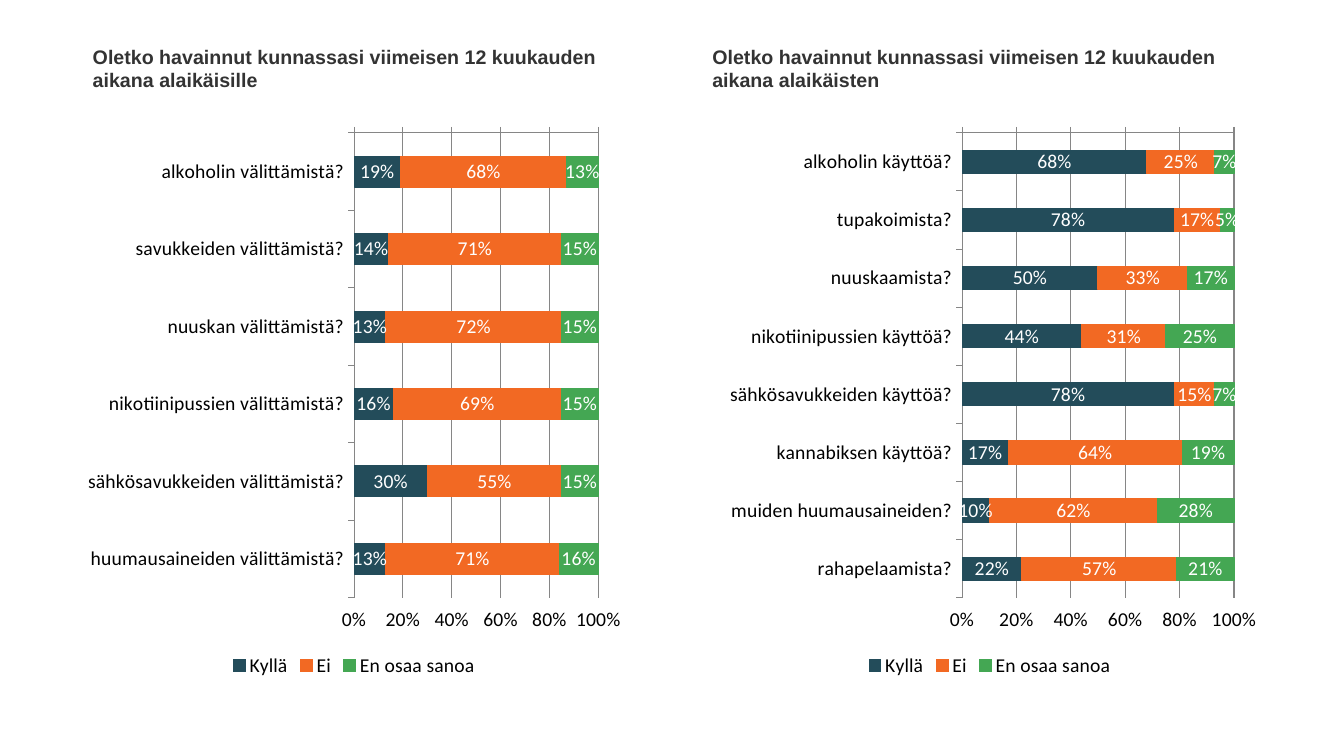
from dataclasses import dataclass

from pptx import Presentation
from pptx import util as u
from pptx.chart.data import CategoryChartData
from pptx.dml.color import RGBColor
from pptx.enum import chart as ch, text
from pptx.oxml import parse_xml
from pptx.oxml.ns import nsdecls


@dataclass(frozen=True)
class Theme:
    """Colours, fonts and type size of the slide."""
    heading: str = "333333"
    label: str = "000000"
    value: str = "FFFFFF"
    grid: str = "868686"
    answers: tuple = ("234C5A", "F26923", "44A753")
    heading_font: str = "Arial"
    chart_font: str = "Calibri"
    size: int = 14


class SurveySlide:
    """Places headings and answer charts in percentages of the slide."""

    def __init__(self, deck, theme):
        """Add a comparison slide and keep its two heading placeholders."""
        self.deck, self.theme = deck, theme
        self.page = deck.slides.add_slide(deck.slide_layouts[4])
        self.headings = [self.page.placeholders[1], self.page.placeholders[3]]
        for box in list(self.page.placeholders):
            if box.placeholder_format.idx not in (1, 3):
                box.element.getparent().remove(box.element)

    def frame(self, left, top, width, height):
        """Turn percentages of the slide into lengths."""
        across, down = self.deck.slide_width / 100, self.deck.slide_height / 100
        return [u.Emu(round(n)) for n in (left * across, top * down, width * across, height * down)]

    def style(self, font, name, color):
        """Apply the common type size with a typeface and colour."""
        font.name, font.size = name, u.Pt(self.theme.size)
        font.color.rgb = RGBColor.from_string(color)

    def heading(self, wording, place):
        """Fill the next heading placeholder."""
        box = self.headings.pop(0)
        box.left, box.top, box.width, box.height = self.frame(*place)
        words = box.text_frame
        words.margin_left = words.margin_right = words.margin_top = words.margin_bottom = 0
        words.vertical_anchor = text.MSO_ANCHOR.TOP
        words.auto_size = text.MSO_AUTO_SIZE.NONE
        words.word_wrap = True
        words.text = wording
        para = words.paragraphs[0]
        para.space_before = u.Pt(0)
        para.alignment = text.PP_ALIGN.LEFT
        para.font.bold = True
        self.style(para.font, self.theme.heading_font, self.theme.heading)

    def chart(self, rows, place, plot_area):
        """Add a stacked bar chart of answers in percent."""
        data = CategoryChartData(number_format="0%")
        data.categories = list(rows)
        for name, values in zip(("Kyllä", "Ei", "En osaa sanoa"), zip(*rows.values())):
            data.add_series(name, [value / 100 for value in values])
        chart = self.page.shapes.add_chart(
            ch.XL_CHART_TYPE.BAR_STACKED, *self.frame(*place), data).chart
        chart.has_title = False
        self.style(chart.font, self.theme.chart_font, self.theme.label)
        chart.has_legend = True
        chart.legend.position = ch.XL_LEGEND_POSITION.BOTTOM
        chart.legend.include_in_layout = False
        self.bars(chart.plots[0])
        self.axes(chart)
        self.plot_area(chart, plot_area)

    def bars(self, plot):
        """Colour the answers and label them."""
        plot.gap_width, plot.overlap, plot.vary_by_categories = 150, 100, False
        for series, color in zip(plot.series, self.theme.answers):
            fill, line = series.format.fill, series.format.line
            fill.solid()
            fill.fore_color.rgb = line.color.rgb = RGBColor.from_string(color)
            line.width = u.Pt(0.75)
            labels = series.data_labels
            labels.show_value = True
            labels.number_format, labels.number_format_is_linked = "0%", False
            labels.position = ch.XL_LABEL_POSITION.CENTER
            self.style(labels.font, self.theme.chart_font, self.theme.value)

    def axes(self, chart):
        """List questions downwards and put the percentages below."""
        questions, shares = chart.category_axis, chart.value_axis
        questions.reverse_order = True
        questions.tick_label_position = ch.XL_TICK_LABEL_POSITION.LOW
        shares.tick_label_position = ch.XL_TICK_LABEL_POSITION.HIGH
        shares.minimum_scale, shares.maximum_scale, shares.major_unit = 0, 1, 0.2
        shares.tick_labels.number_format = "0%"
        shares.tick_labels.number_format_is_linked = False
        shares.has_major_gridlines = True
        for axis in (questions, shares):
            axis.major_tick_mark = ch.XL_TICK_MARK.OUTSIDE
            axis.minor_tick_mark = ch.XL_TICK_MARK.NONE
        for part in (questions, shares, shares.major_gridlines):
            part.format.line.color.rgb = RGBColor.from_string(self.theme.grid)
            part.format.line.width = u.Pt(0.75)

    def plot_area(self, chart, place):
        """Fix the inner plot area in shares of the chart."""
        area = chart.element.xpath("c:chart/c:plotArea")[0]
        for layout in area.xpath("c:layout"):
            area.remove(layout)
        modes = "".join(f'<c:{side}Mode val="edge"/>' for side in "xy")
        sizes = "".join(f'<c:{side} val="{share}"/>' for side, share in zip("xywh", place))
        area.insert(0, parse_xml(
            f'<c:layout {nsdecls("c")}><c:manualLayout><c:layoutTarget val="inner"/>'
            f"{modes}{sizes}</c:manualLayout></c:layout>"))


SUPPLY = {
    "alkoholin välittämistä?": (19, 68, 13),
    "savukkeiden välittämistä?": (14, 71, 15),
    "nuuskan välittämistä?": (13, 72, 15),
    "nikotiinipussien välittämistä?": (16, 69, 15),
    "sähkösavukkeiden välittämistä?": (30, 55, 15),
    "huumausaineiden välittämistä?": (13, 71, 16),
}
USE = {
    "alkoholin käyttöä?": (68, 25, 7),
    "tupakoimista?": (78, 17, 5),
    "nuuskaamista?": (50, 33, 17),
    "nikotiinipussien käyttöä?": (44, 31, 25),
    "sähkösavukkeiden käyttöä?": (78, 15, 7),
    "kannabiksen käyttöä?": (17, 64, 19),
    "muiden huumausaineiden?": (10, 62, 28),
    "rahapelaamista?": (22, 57, 21),
}


def main():
    """Build the survey slide and save it."""
    deck = Presentation()
    deck.slide_width, deck.slide_height = u.Inches(13.33), u.Inches(7.5)
    slide = SurveySlide(deck, Theme())
    question = "Oletko havainnut kunnassasi viimeisen 12 kuukauden aikana "
    panels = (
        ("alaikäisille", SUPPLY, 6.9, 40.2, 5.7, (0.5, 0.02, 0.44, 0.83)),
        ("alaikäisten", USE, 53, 41.3, 53, (0.45, 0.02, 0.49, 0.83)),
    )
    for ending, rows, left, width, chart_left, plot_area in panels:
        slide.heading(question + ending, (left, 5.9, width, 6.3))
        slide.chart(rows, (chart_left, 16.1, 41.3, 74.1), plot_area)
    deck.save("out.pptx")


if __name__ == "__main__":
    main()
